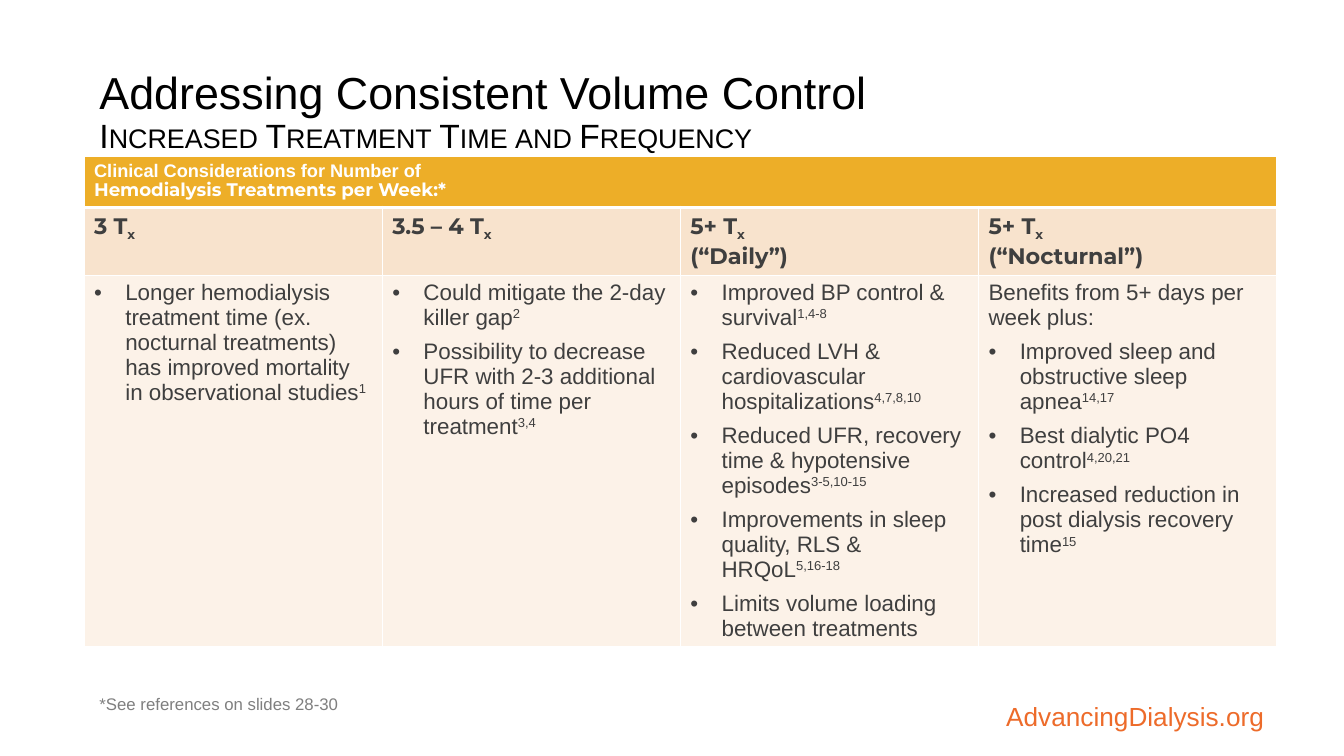
from dataclasses import dataclass

from lxml.etree import SubElement
from pptx import Presentation
from pptx.dml.color import RGBColor
from pptx.enum.text import MSO_ANCHOR, PP_ALIGN
from pptx.oxml.ns import qn
from pptx.util import Inches, Pt

COLUMNS, ROWS = 160, 90  # grid over the whole slide
WIDTH, HEIGHT = Inches(13.333), Inches(7.5)


@dataclass(frozen=True)
class Theme:
    sans: str = "Arial"
    display: str = "Montserrat"
    black: str = "000000"
    white: str = "FFFFFF"
    ink: str = "3F3F3F"
    gray: str = "7F7F7F"
    orange: str = "ED6B2A"
    gold: str = "EDAE28"
    peach: str = "F8E3CD"
    cream: str = "FCF2E8"
    title: float = 32
    subtitle: float = 24
    site: float = 18.7
    body: float = 16
    banner: float = 13
    note: float = 12
    gap: float = 6.7


class SlideBuilder:
    def __init__(self, slide, theme):
        self.slide, self.theme = slide, theme

    def grid(self, left, top, width, height):
        return (int(WIDTH * left / COLUMNS), int(HEIGHT * top / ROWS),
                int(WIDTH * width / COLUMNS), int(HEIGHT * height / ROWS))

    def span(self, para, text, size, color, name=None, bold=False, **marks):
        span = para.add_run()
        span.text = text
        formats = {"name": name or self.theme.sans, "size": Pt(size), "bold": bold}
        for key, value in formats.items():
            setattr(span.font, key, value)
        span.font.color.rgb = RGBColor.from_string(color)
        for key, value in marks.items():
            span.font._element.set(key, str(value))

    def frame(self, frame, anchor, side=0.07, edge=0.04):
        formats = {"word_wrap": True, "vertical_anchor": anchor,
                   "margin_left": Inches(side), "margin_right": Inches(side),
                   "margin_top": Inches(edge), "margin_bottom": Inches(edge)}
        for key, value in formats.items():
            setattr(frame, key, value)
        para = frame.paragraphs[0]
        para.line_spacing, para.space_before = 0.9, Pt(0)
        return para

    def title(self, heading, subheading, place):
        box, theme = self.slide.shapes.title, self.theme
        box.left, box.top, box.width, box.height = self.grid(*place)
        para = self.frame(box.text_frame, MSO_ANCHOR.MIDDLE)
        para.alignment = PP_ALIGN.LEFT
        self.span(para, heading, theme.title, theme.black)
        para.add_line_break()
        self.span(para, subheading, theme.subtitle, theme.black, cap="small")

    def text(self, text, place, size, color, align, anchor, **margins):
        box = self.slide.shapes.add_textbox(*self.grid(*place))
        para = self.frame(box.text_frame, anchor, **margins)
        para.alignment = align
        self.span(para, text, size, color)

    def table(self, place, heights, columns):
        shape = self.slide.shapes.add_table(len(heights), columns, *self.grid(*place))
        table = shape.table
        table.first_row = table.horz_banding = False
        for row, height in zip(table.rows, heights):
            row.height = int(HEIGHT * height / ROWS)
        return table

    def cell(self, cell, color, top=1, bottom=1):
        properties = cell._tc.get_or_add_tcPr()
        for side, width in {"L": 1, "R": 1, "T": top, "B": bottom}.items():
            line = SubElement(properties, qn(f"a:ln{side}"), w=str(Pt(width)))
            fill = SubElement(line, qn("a:solidFill"))
            SubElement(fill, qn("a:srgbClr"), val=self.theme.white)
        cell.fill.solid()
        cell.fill.fore_color.rgb = RGBColor.from_string(color)

    def paragraphs(self, cell, count):
        frame = cell.text_frame
        return [frame.paragraphs[0]] + [frame.add_paragraph() for _ in range(count - 1)]

    def bullet(self, para):
        properties = para._p.get_or_add_pPr()
        properties.set("marL", str(Inches(0.31)))
        properties.set("indent", str(Inches(-0.31)))
        SubElement(properties, qn("a:buFont"), typeface=self.theme.sans)
        SubElement(properties, qn("a:buChar"), char="•")

    def banner(self, cell, lines):
        theme = self.theme
        cell.vertical_anchor = MSO_ANCHOR.MIDDLE
        fonts = (theme.sans, theme.display)
        for para, line, name in zip(self.paragraphs(cell, len(lines)), lines, fonts):
            para.line_spacing = 0.9
            self.span(para, line, theme.banner, theme.white, name, bold=True)

    def schedule(self, cell, count, label):
        theme = self.theme
        style = (theme.body, theme.ink, theme.display, True)
        paras = self.paragraphs(cell, 2 if label else 1)
        self.span(paras[0], f"{count} T", *style)
        self.span(paras[0], "x", *style, baseline=-25000)
        if label:
            self.span(paras[1], label, *style)

    def benefits(self, cell, intro, items):
        theme = self.theme
        entries = ([(intro, "")] if intro else []) + items
        for index, (para, entry) in enumerate(zip(self.paragraphs(cell, len(entries)), entries)):
            text, references = entry
            if index:
                para.space_before = Pt(theme.gap)
            if text != intro:
                self.bullet(para)
            self.span(para, text, theme.body, theme.ink)
            if references:
                self.span(para, references, theme.body, theme.ink, baseline=30000)


BANNER = ["Clinical Considerations for Number of", "Hemodialysis Treatments per Week:*"]

# Treatments per week, label, introduction, (benefit, references)
SCHEDULES = [
    ("3", "", "", [
        ("Longer hemodialysis treatment time (ex. nocturnal treatments) has improved "
         "mortality in observational studies", "1")]),
    ("3.5 – 4", "", "", [
        ("Could mitigate the 2-day killer gap", "2"),
        ("Possibility to decrease UFR with 2-3 additional hours of time per treatment", "3,4")]),
    ("5+", "(“Daily”)", "", [
        ("Improved BP control & survival", "1,4-8"),
        ("Reduced LVH & cardiovascular hospitalizations", "4,7,8,10"),
        ("Reduced UFR, recovery time & hypotensive episodes", "3-5,10-15"),
        ("Improvements in sleep quality, RLS & HRQoL", "5,16-18"),
        ("Limits volume loading between treatments", "")]),
    ("5+", "(“Nocturnal”)", "Benefits from 5+ days per week plus:", [
        ("Improved sleep and obstructive sleep apnea", "14,17"),
        ("Best dialytic PO4 control", "4,20,21"),
        ("Increased reduction in post dialysis recovery time", "15")]),
]


def main():
    deck = Presentation()
    deck.slide_width, deck.slide_height = WIDTH, HEIGHT
    theme = Theme()
    page = SlideBuilder(deck.slides.add_slide(deck.slide_layouts[5]), theme)

    # Title
    page.title("Addressing Consistent Volume Control",
               "Increased Treatment Time and Frequency", (11, 4.8, 102, 17.4))

    # Table of treatment schedules
    heights = (6.1, 8.1, 44.1)
    table = page.table((10, 18.6, 142, sum(heights)), heights, len(SCHEDULES))
    for column, (count, label, intro, items) in enumerate(SCHEDULES):
        banner, header, body = (table.cell(row, column) for row in range(3))
        page.cell(banner, theme.gold, bottom=3)
        page.cell(header, theme.peach, top=3)
        page.cell(body, theme.cream)
        page.schedule(header, count, label)
        page.benefits(body, intro, items)
    table.cell(0, 0).merge(table.cell(0, len(SCHEDULES) - 1))
    page.banner(table.cell(0, 0), BANNER)

    # Reference note and site address
    page.text("*See references on slides 28-30", (11, 82.4, 99.7, 3.7),
              theme.note, theme.gray, PP_ALIGN.LEFT, MSO_ANCHOR.TOP)
    page.text("AdvancingDialysis.org", (97.4, 79.9, 54.4, 7.3), theme.site, theme.orange,
              PP_ALIGN.RIGHT, MSO_ANCHOR.BOTTOM, side=0.11, edge=0)

    deck.save("out.pptx")


if __name__ == "__main__":
    main()
